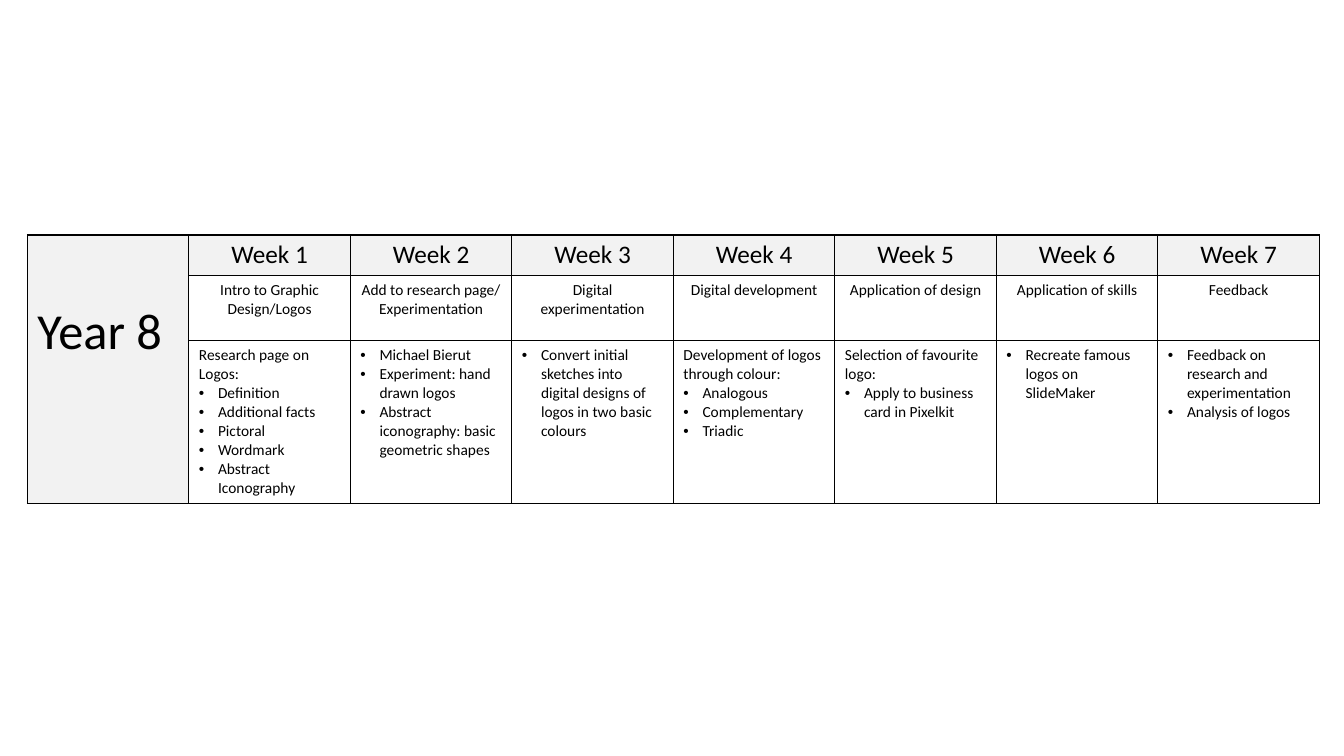
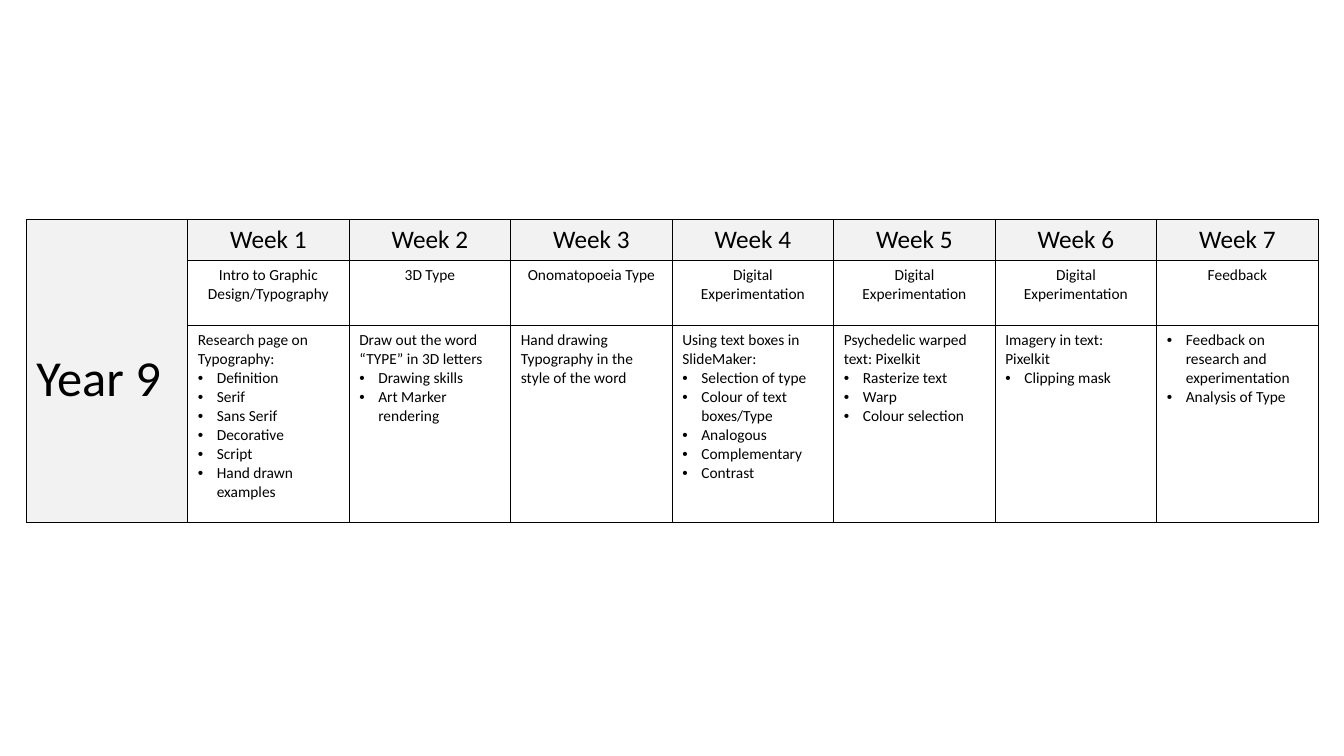
from lxml import etree
from pptx import Presentation
from pptx.dml.color import RGBColor
from pptx.enum.text import PP_ALIGN
from pptx.oxml.ns import qn
from pptx.util import Cm, Pt

LEFT, MID = PP_ALIGN.LEFT, PP_ALIGN.CENTER
FONT = "Calibri"
INK, GREY, WHITE = "000000", "F2F2F2", "FFFFFF"
WIDE, COL, HEAD, TOPIC = 33.87, 4.07, 1.03, 1.64
HANG = 0.48

LOGOS = [
    ("Intro to Graphic Design/Logos", "Research page on Logos:",
     ["Definition", "Additional facts", "Pictoral", "Wordmark", "Abstract Iconography"]),
    ("Add to research page/ Experimentation", "",
     ["Michael Bierut", "Experiment: hand drawn logos",
      "Abstract iconography: basic geometric shapes"]),
    ("Digital experimentation", "",
     ["Convert initial sketches into digital designs of logos in two basic colours"]),
    ("Digital development", "Development of logos through colour:",
     ["Analogous", "Complementary", "Triadic"]),
    ("Application of design", "Selection of favourite logo:",
     ["Apply to business card in Pixelkit"]),
    ("Application of skills", "", ["Recreate famous logos on SlideMaker"]),
    ("Feedback", "", ["Feedback on research and experimentation", "Analysis of logos"]),
]
TYPE = [
    ("Intro to Graphic Design/Typography", "Research page on Typography:",
     ["Definition", "Serif", "Sans Serif", "Decorative", "Script", "Hand drawn examples"]),
    ("3D Type", "Draw out the word “TYPE” in 3D letters",
     ["Drawing skills", "Art Marker rendering"]),
    ("Onomatopoeia Type", "Hand drawing Typography in the style of the word", []),
    ("Digital Experimentation", "Using text boxes in SlideMaker:",
     ["Selection of type", "Colour of text boxes/Type", "Analogous", "Complementary",
      "Contrast"]),
    ("Digital Experimentation", "Psychedelic warped text: Pixelkit",
     ["Rasterize text", "Warp", "Colour selection"]),
    ("Digital Experimentation", "Imagery in text: Pixelkit", ["Clipping mask"]),
    ("Feedback", "", ["Feedback on research and experimentation", "Analysis of Type"]),
]


def tint(fmt, code):
    """Set a colour format from a hex string."""
    fmt.rgb = RGBColor.from_string(code)


def frame(cell, fill):
    """Fill a cell and rule all four of its sides."""
    cell.fill.solid()
    tint(cell.fill.fore_color, fill)
    props = cell._tc.get_or_add_tcPr()
    for spot, side in enumerate(("a:lnL", "a:lnR", "a:lnT", "a:lnB")):
        line = etree.Element(qn(side), w=str(Pt(1)))
        solid = etree.SubElement(line, qn("a:solidFill"))
        etree.SubElement(solid, qn("a:srgbClr"), val=INK)
        props.insert(spot, line)


def bullet(para):
    """Give a paragraph a round bullet and a hanging indent."""
    props = para._p.get_or_add_pPr()
    props.set("marL", str(Cm(HANG)))
    props.set("indent", str(-Cm(HANG)))
    etree.SubElement(props, qn("a:buFont"), typeface="Arial")
    etree.SubElement(props, qn("a:buChar"), char="•")


def write(cell, lead, size, align=LEFT, points=()):
    """Write a lead line, if any, and bulleted points into a cell."""
    body = cell.text_frame
    lines = ([(lead, False)] if lead else []) + [(point, True) for point in points]
    for num, (text, dot) in enumerate(lines):
        para = body.add_paragraph() if num else body.paragraphs[0]
        para.text = text
        para.alignment = align
        if dot:
            bullet(para)
        for run in para.runs:
            run.font.name, run.font.size = FONT, Pt(size)
            tint(run.font.color, INK)


def plan(slide, year, weeks, left, top, last, drop):
    """Place a year's table of weeks, its last row and label drop given in cm."""
    rows = (HEAD, TOPIC, last)
    count = len(weeks) + 1
    grid = slide.shapes.add_table(len(rows), count, Cm(left), Cm(top),
                                  Cm(COL * count), Cm(sum(rows))).table
    grid.first_row = grid.horz_banding = False
    for col in grid.columns:
        col.width = Cm(COL)
    for num, (row, high) in enumerate(zip(grid.rows, rows)):
        row.height = Cm(high)
        for pos, cell in enumerate(row.cells):
            frame(cell, WHITE if num and pos else GREY)
    label = grid.cell(0, 0)
    label.merge(grid.cell(len(rows) - 1, 0))
    label.margin_top = Cm(drop)
    write(label, year, 36)
    for num, (topic, lead, points) in enumerate(weeks, 1):
        write(grid.cell(0, num), f"Week {num}", 18, MID)
        write(grid.cell(1, num), topic, 11, MID)
        write(grid.cell(2, num), lead, 11, LEFT, points)


def main():
    """Build and save both year plans."""
    deck = Presentation()
    deck.slide_width, deck.slide_height = Cm(WIDE), Cm(19.05)
    blank = deck.slide_layouts[6]
    plan(deck.slides.add_slide(blank), "Year 8", LOGOS, 0.69, 5.92, 4.1, 1.68)
    plan(deck.slides.add_slide(blank), "Year 9", TYPE, 0.66, 5.54, 4.95, 3.23)
    deck.save("out.pptx")


if __name__ == "__main__":
    main()
